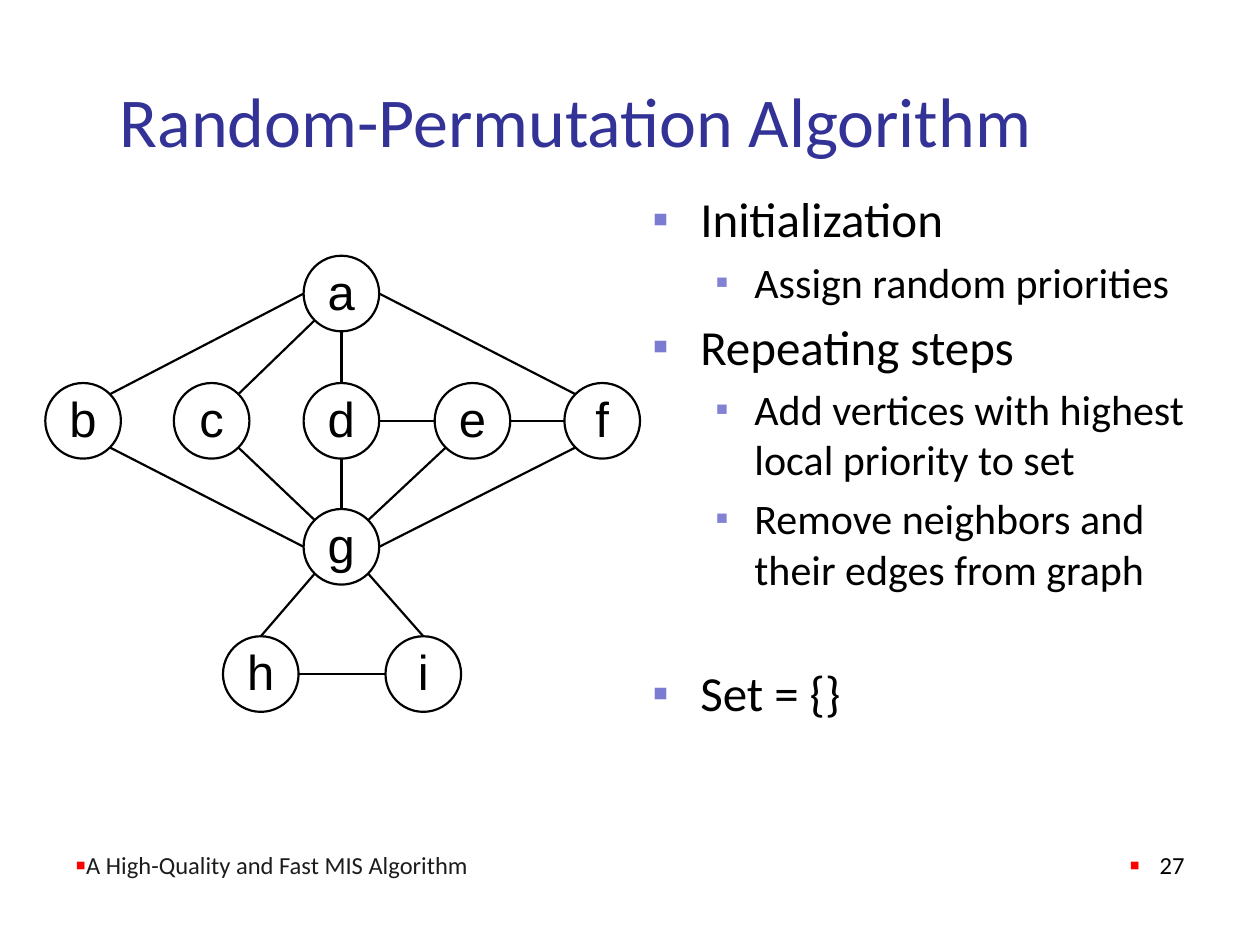
import pptx
import pptx.util
import pptx.dml.color
import pptx.enum.shapes
import pptx.enum.text
import pptx.oxml.ns
from lxml import etree

Inches = pptx.util.Inches
Pt = pptx.util.Pt
RGBColor = pptx.dml.color.RGBColor
ANCHOR = pptx.enum.text.MSO_ANCHOR
ALIGN = pptx.enum.text.PP_ALIGN

BLACK = RGBColor(0x00, 0x00, 0x00)
TITLE_BLUE = RGBColor(0x33, 0x33, 0x97)
FOOTER_GRAY = RGBColor(0x1C, 0x1C, 0x1C)
BULLET_BLUE = RGBColor(0x7B, 0x7B, 0xD1)
SUB_BULLET_BLUE = RGBColor(0x82, 0x82, 0xD4)
RED = RGBColor(0xFF, 0x00, 0x00)

# Graph vertices: left and top of each circle
SIZE = 0.6
ROWS = [2.03, 3.04, 4.04, 5.05]
VERTICES = {
    "a": (2.41, ROWS[0]),
    "b": (0.36, ROWS[1]), "c": (1.38, ROWS[1]), "d": (2.41, ROWS[1]),
    "e": (3.45, ROWS[1]), "f": (4.48, ROWS[1]),
    "g": (2.41, ROWS[2]),
    "h": (1.77, ROWS[3]), "i": (3.06, ROWS[3]),
}
# Points on a circle, as fractions of its size
SITES = {
    "top": (0.5, 0), "bottom": (0.5, 1), "left": (0, 0.5), "right": (1, 0.5),
    "top left": (0.15, 0.15), "top right": (0.85, 0.15),
    "bottom left": (0.15, 0.85), "bottom right": (0.85, 0.85),
}
EDGES = [
    ("a", "left", "b", "top right"), ("a", "bottom left", "c", "top right"),
    ("a", "bottom", "d", "top"), ("a", "right", "f", "top left"),
    ("d", "right", "e", "left"), ("e", "right", "f", "left"),
    ("b", "bottom right", "g", "left"), ("c", "bottom right", "g", "top left"),
    ("d", "bottom", "g", "top"), ("e", "bottom left", "g", "top right"),
    ("f", "bottom left", "g", "right"), ("g", "bottom left", "h", "top"),
    ("g", "bottom right", "i", "top"), ("h", "right", "i", "left"),
]

# Outline: level, text, space before in points
OUTLINE = [
    (0, "Initialization", 0),
    (1, "Assign random priorities", 4.8),
    (0, "Repeating steps", 5.6),
    (1, "Add vertices with highest local priority to set", 4.8),
    (1, "Remove neighbors and their edges from graph", 4.8),
    (0, "Set = {}", 39.7),
]
# Per level: text size, left margin, hanging indent, bullet colour, bullet percent
LEVELS = [
    (28, 0.38, 0.38, BULLET_BLUE, 95),
    (24, 0.81, 0.31, SUB_BULLET_BLUE, 90),
]


def add_bullet(p, color, percent, margin=0, hanging=0):
    pPr = p._p.get_or_add_pPr()
    pPr.set("marL", str(Inches(margin)))
    pPr.set("indent", str(-Inches(hanging)))
    qn = pptx.oxml.ns.qn
    bu_color = etree.SubElement(pPr, qn("a:buClr"))
    etree.SubElement(bu_color, qn("a:srgbClr"), val=str(color))
    etree.SubElement(pPr, qn("a:buSzPct"), val=str(percent * 1000))
    etree.SubElement(pPr, qn("a:buFont"), typeface="Arial")
    etree.SubElement(pPr, qn("a:buChar"), char="▪")


def format_runs(p, size, color, font="Calibri"):
    for r in p.runs:
        r.font.size = Pt(size)
        r.font.name = font
        r.font.color.rgb = color


def add_text_box(s, left, top, width, height, anchor):
    box = s.shapes.add_textbox(Inches(left), Inches(top), Inches(width), Inches(height))
    tf = box.text_frame
    tf.word_wrap = True
    tf.vertical_anchor = anchor
    return tf


def add_title(s, text):
    tf = add_text_box(s, 0.5, 0.6, 9, 0.7, ANCHOR.MIDDLE)
    tf.margin_left = Inches(0.45)
    tf.text = text
    format_runs(tf.paragraphs[0], 40, TITLE_BLUE)


def add_outline(s):
    tf = add_text_box(s, 5.08, 1.45, 4.5, 4.9, ANCHOR.TOP)
    for n, (level, text, space) in enumerate(OUTLINE):
        p = tf.add_paragraph() if n else tf.paragraphs[0]
        size, margin, hanging, color, percent = LEVELS[level]
        p.text = text
        p.level = level
        p.space_before = Pt(space)
        add_bullet(p, color, percent, margin, hanging)
        format_runs(p, size, BLACK)


def add_footer(s, left, width, text, color, align, hanging=0):
    tf = add_text_box(s, left, 6.53, width, 0.5, ANCHOR.BOTTOM)
    tf.text = text
    p = tf.paragraphs[0]
    p.alignment = align
    add_bullet(p, RED, 125, hanging, hanging)
    format_runs(p, 14, color)


def site_point(name, site):
    left, top = VERTICES[name]
    dx, dy = SITES[site]
    return Inches(left + dx * SIZE), Inches(top + dy * SIZE)


def add_edge(s, start, start_site, end, end_site):
    edge = s.shapes.add_connector(
        pptx.enum.shapes.MSO_CONNECTOR.STRAIGHT,
        *site_point(start, start_site), *site_point(end, end_site))
    edge.line.color.rgb = BLACK
    edge.line.width = Pt(1.25)
    etree.SubElement(edge._element.spPr, pptx.oxml.ns.qn("a:effectLst"))


def add_vertex(s, name):
    left, top = VERTICES[name]
    circle = s.shapes.add_shape(
        pptx.enum.shapes.MSO_SHAPE.OVAL,
        Inches(left), Inches(top), Inches(SIZE), Inches(SIZE))
    circle.shadow.inherit = False
    circle.fill.background()
    circle.line.color.rgb = BLACK
    circle.line.width = Pt(1.25)
    tf = circle.text_frame
    tf.margin_left = tf.margin_right = tf.margin_top = tf.margin_bottom = 0
    tf.vertical_anchor = ANCHOR.BOTTOM
    tf.text = name
    tf.paragraphs[0].alignment = ALIGN.CENTER
    format_runs(tf.paragraphs[0], 28, BLACK, "Arial")


def main():
    prs = pptx.Presentation()
    prs.slide_width = Inches(10)
    prs.slide_height = Inches(7.5)
    s = prs.slides.add_slide(prs.slide_layouts[6])

    # Graph
    for edge in EDGES:
        add_edge(s, *edge)
    for name in VERTICES:
        add_vertex(s, name)

    # Title and outline
    add_title(s, "Random-Permutation Algorithm")
    add_outline(s)

    # Footer and slide number
    add_footer(s, 0.5, 6.92, "A High-Quality and Fast MIS Algorithm", FOOTER_GRAY, ALIGN.LEFT)
    add_footer(s, 7.42, 2.08, "27", BLACK, ALIGN.RIGHT, 0.24)

    prs.save("out.pptx")


if __name__ == "__main__":
    main()
